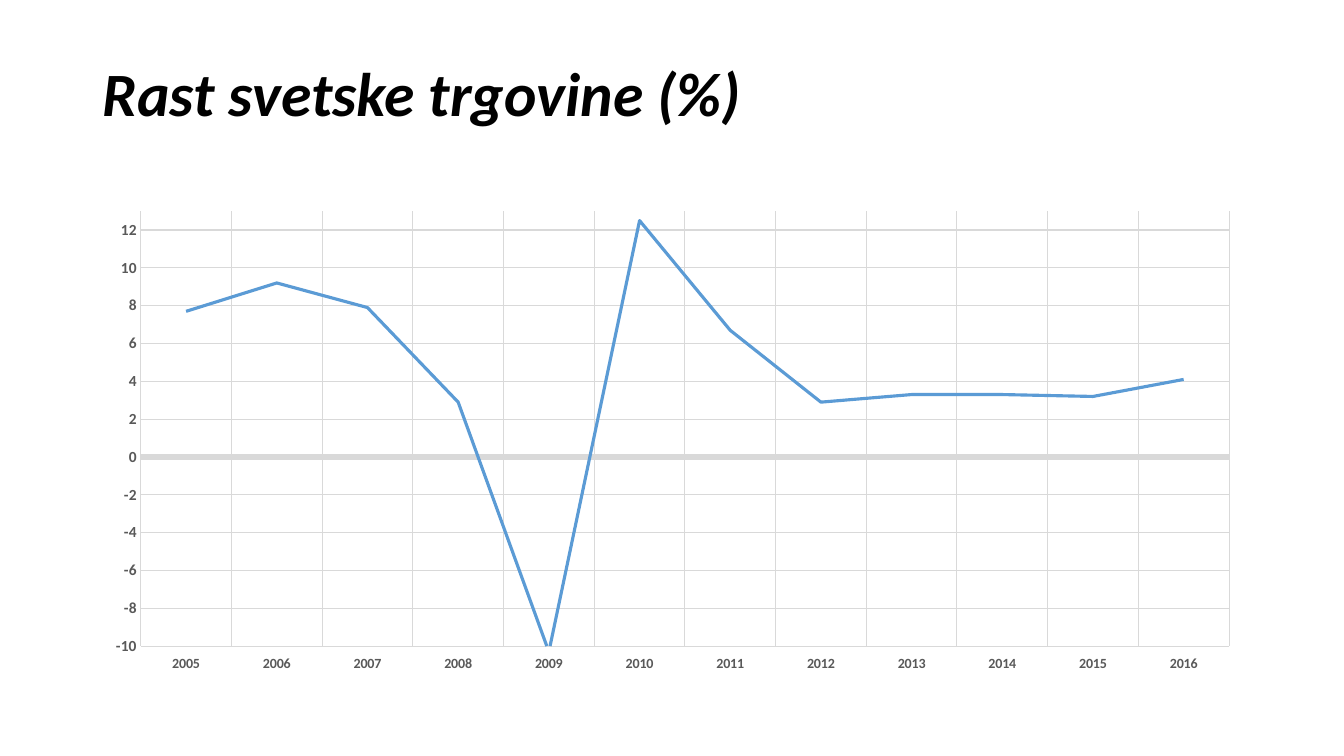
from pptx import Presentation
from pptx.chart.data import CategoryChartData
from pptx.dml.color import RGBColor
from pptx.enum.chart import XL_CHART_TYPE, XL_MARKER_STYLE, XL_TICK_LABEL_POSITION, XL_TICK_MARK
from pptx.enum.text import MSO_ANCHOR, PP_ALIGN
from pptx.util import Inches, Pt

LINE_CHART = XL_CHART_TYPE.LINE
NO_MARKER = XL_MARKER_STYLE.NONE
NO_TICK = XL_TICK_MARK.NONE
LABELS_LOW = XL_TICK_LABEL_POSITION.LOW
MIDDLE = MSO_ANCHOR.MIDDLE
LEFT = PP_ALIGN.LEFT

BLACK = RGBColor(0x00, 0x00, 0x00)
LABEL_GREY = RGBColor(0x59, 0x59, 0x59)
GRID_GREY = RGBColor(0xD9, 0xD9, 0xD9)
TRADE_BLUE = RGBColor(0x5B, 0x9B, 0xD5)
FONT = "Calibri"

YEARS = [str(year) for year in range(2005, 2017)]
GROWTH = [7.7, 9.2, 7.9, 2.9, -10.3, 12.5, 6.7, 2.9, 3.3, 3.3, 3.2, 4.1]


def style_font(font, size, color, bold=False, italic=False):
    """Set typeface, size, colour and emphasis of a font."""
    font.name = FONT
    font.size = Pt(size)
    font.color.rgb = color
    font.bold = bold
    font.italic = italic


def style_line(line, color, width):
    """Set colour and width of a line."""
    line.color.rgb = color
    line.width = Pt(width)


def place_title(heading, left, top, width, height):
    """Place and fill the title placeholder."""
    heading.left, heading.top = Inches(left), Inches(top)
    heading.width, heading.height = Inches(width), Inches(height)
    frame = heading.text_frame
    frame.word_wrap = True
    frame.vertical_anchor = MIDDLE
    paragraph = frame.paragraphs[0]
    paragraph.alignment = LEFT
    paragraph.line_spacing = 0.9
    run = paragraph.add_run()
    run.text = "Rast svetske trgovine (%)"
    style_font(run.font, 44, BLACK, bold=True, italic=True)


def style_axis(axis, label_size):
    """Format the labels, ticks and gridlines of an axis."""
    axis.major_tick_mark = NO_TICK
    axis.minor_tick_mark = NO_TICK
    axis.has_major_gridlines = True
    style_line(axis.major_gridlines.format.line, GRID_GREY, 0.75)
    style_font(axis.tick_labels.font, label_size, LABEL_GREY, bold=True)


def add_growth_chart(slide, left, top, width, height):
    """Add the line chart of yearly trade growth."""
    growth_data = CategoryChartData(number_format="0.0")
    growth_data.categories = YEARS
    growth_data.add_series("Series 1", GROWTH)
    chart = slide.shapes.add_chart(
        LINE_CHART, Inches(left), Inches(top), Inches(width), Inches(height), growth_data
    ).chart
    chart.has_title = False
    chart.has_legend = False
    style_font(chart.font, 10, BLACK)

    years = chart.category_axis
    style_axis(years, 10)
    years.tick_label_position = LABELS_LOW
    style_line(years.format.line, GRID_GREY, 4.5)

    percent = chart.value_axis
    style_axis(percent, 11)
    percent.minimum_scale, percent.maximum_scale = -10, 13
    percent.major_unit = 2
    percent.tick_labels.number_format = "0"
    percent.tick_labels.number_format_is_linked = False
    percent.format.line.fill.background()

    plot = chart.plots[0]
    plot.vary_by_categories = False
    growth = plot.series[0]
    growth.smooth = False
    growth.marker.style = NO_MARKER
    style_line(growth.format.line, TRADE_BLUE, 2.25)


def main():
    """Build the trade growth slide and save it."""
    deck = Presentation()
    deck.slide_width, deck.slide_height = Inches(13.33), Inches(7.5)
    slide = deck.slides.add_slide(deck.slide_layouts[5])
    place_title(slide.shapes.title, 0.92, 0.4, 11.5, 1.12)
    add_growth_chart(slide, 0.92, 2, 11.5, 4.76)
    deck.save("out.pptx")


if __name__ == "__main__":
    main()
